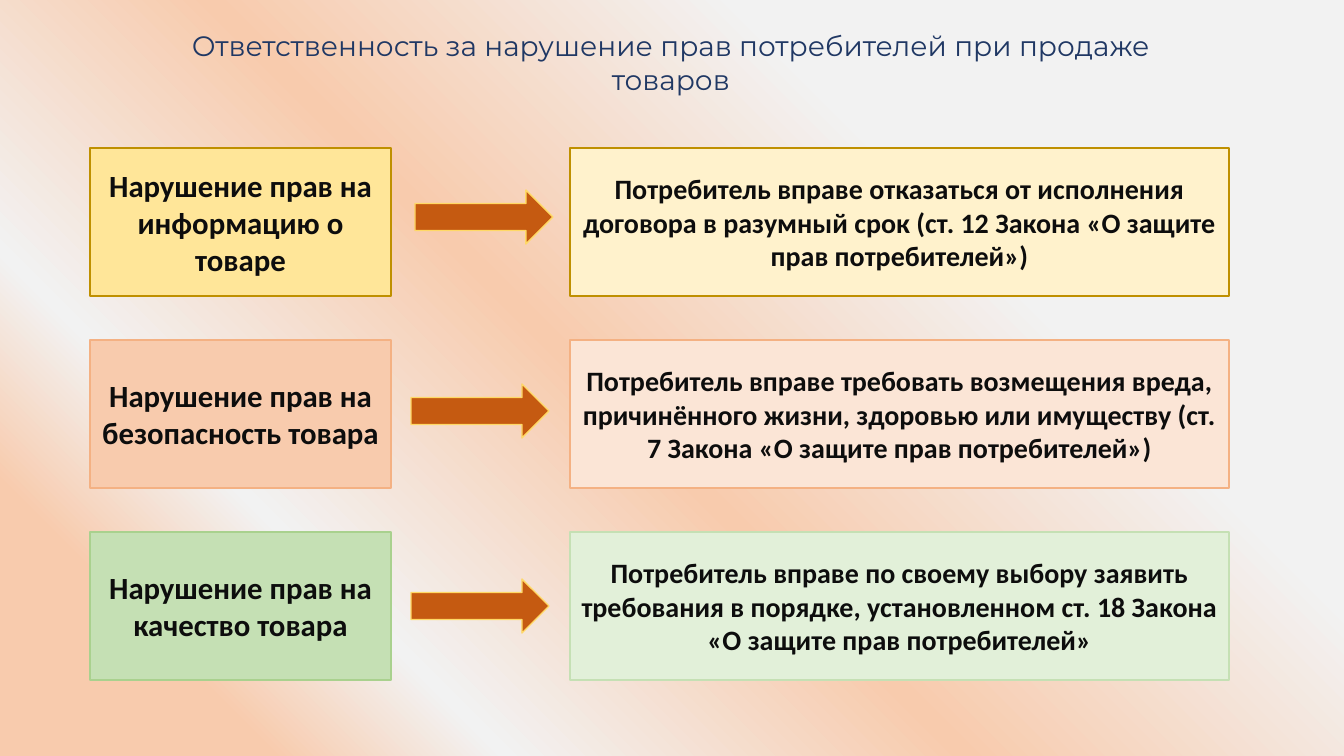
from copy import deepcopy

from pptx import Presentation
from pptx.dml.color import RGBColor
from pptx.enum.shapes import MSO_SHAPE
from pptx.enum.text import MSO_ANCHOR, MSO_AUTO_SIZE, PP_ALIGN
from pptx.util import Pt

RECT, ARROW = MSO_SHAPE.RECTANGLE, MSO_SHAPE.RIGHT_ARROW
CENTER, MIDDLE = PP_ALIGN.CENTER, MSO_ANCHOR.MIDDLE
GROW = MSO_AUTO_SIZE.SHAPE_TO_FIT_TEXT
PX = 914400 / 100.8

COLORS = {
    "gray": "F2F2F2", "peach": "F8CBAD", "navy": "203864", "ink": "0D0D0D",
    "gold": "FFE699", "cream": "FFF2CC", "ochre": "BF9000",
    "blush": "FBE5D6", "coral": "F4B183",
    "green": "C5E0B4", "mint": "E2F0D9", "leaf": "A9D18E",
    "rust": "C55A11", "sun": "FFD966",
}


def put(text, at, kind=None, fill=None, line=None, size=20, color="ink",
        font="Calibri", bold=True):
    """Place a filled shape, or a text box if no kind is given."""
    box = [round(n * PX) for n in at]
    if kind is None:
        shape = slide.shapes.add_textbox(*box)
    else:
        shape = slide.shapes.add_shape(kind, *box)
        shape.shadow.inherit = False
        shape.fill.solid()
        shape.fill.fore_color.rgb = RGBColor.from_string(COLORS[fill])
        shape.line.color.rgb = RGBColor.from_string(COLORS[line])
        shape.line.width = Pt(1)
    if text:
        frame = shape.text_frame
        frame.word_wrap = True
        if kind is None:
            frame.auto_size = GROW
        else:
            frame.vertical_anchor = MIDDLE
        para = frame.paragraphs[0]
        para.alignment = CENTER
        run = para.add_run()
        run.text = text
        run.font.size = Pt(size)
        run.font.name = font
        run.font.bold = bold
        run.font.color.rgb = RGBColor.from_string(COLORS[color])


deck = Presentation()
deck.slide_width, deck.slide_height = round(1344 * PX), round(756 * PX)
slide = deck.slides.add_slide(deck.slide_layouts[6])

# Background: diagonal gradient with four stops
back = slide.background.fill
back.gradient()
back.gradient_angle = 225
stops = slide.element.xpath(".//a:gsLst")[0]
for stop in list(stops):
    stops.append(deepcopy(stop))
bands = [(0.29, "gray"), (0.54, "peach"), (0.76, "gray"), (0.87, "peach")]
for stop, (place, tone) in zip(back.gradient_stops, bands):
    stop.position = place
    stop.color.rgb = RGBColor.from_string(COLORS[tone])

# Title
put("Ответственность за нарушение прав потребителей при продаже товаров",
    (152, 24, 1038, 78), color="navy", font="Montserrat", bold=False)

# Rows: violation, its colours, remedy, its colours, arrow position
rows = [
    ("Нарушение прав на информацию о товаре", "gold", "ochre",
     "Потребитель вправе отказаться от исполнения договора в разумный срок "
     "(ст. 12 Закона «О защите прав потребителей»)", "cream", "ochre",
     (415, 190)),
    ("Нарушение прав на безопасность товара", "peach", "coral",
     "Потребитель вправе требовать возмещения вреда, причинённого жизни, "
     "здоровью или имуществу (ст. 7 Закона «О защите прав потребителей»)",
     "blush", "coral", (411, 384)),
    ("Нарушение прав на качество товара", "green", "leaf",
     "Потребитель вправе по своему выбору заявить требования в порядке, "
     "установленном ст. 18 Закона «О защите прав потребителей»",
     "mint", "green", (411, 579)),
]
for i, (cause, fill, line, right, tint, edge, spot) in enumerate(rows):
    top = 148 + 192 * i
    put(cause, (90, top, 301, 148), RECT, fill, line, size=22)
    put(right, (570, top, 659, 148), RECT, tint, edge)
    put("", (*spot, 138, 54), ARROW, "rust", "sun")

deck.save("out.pptx")
